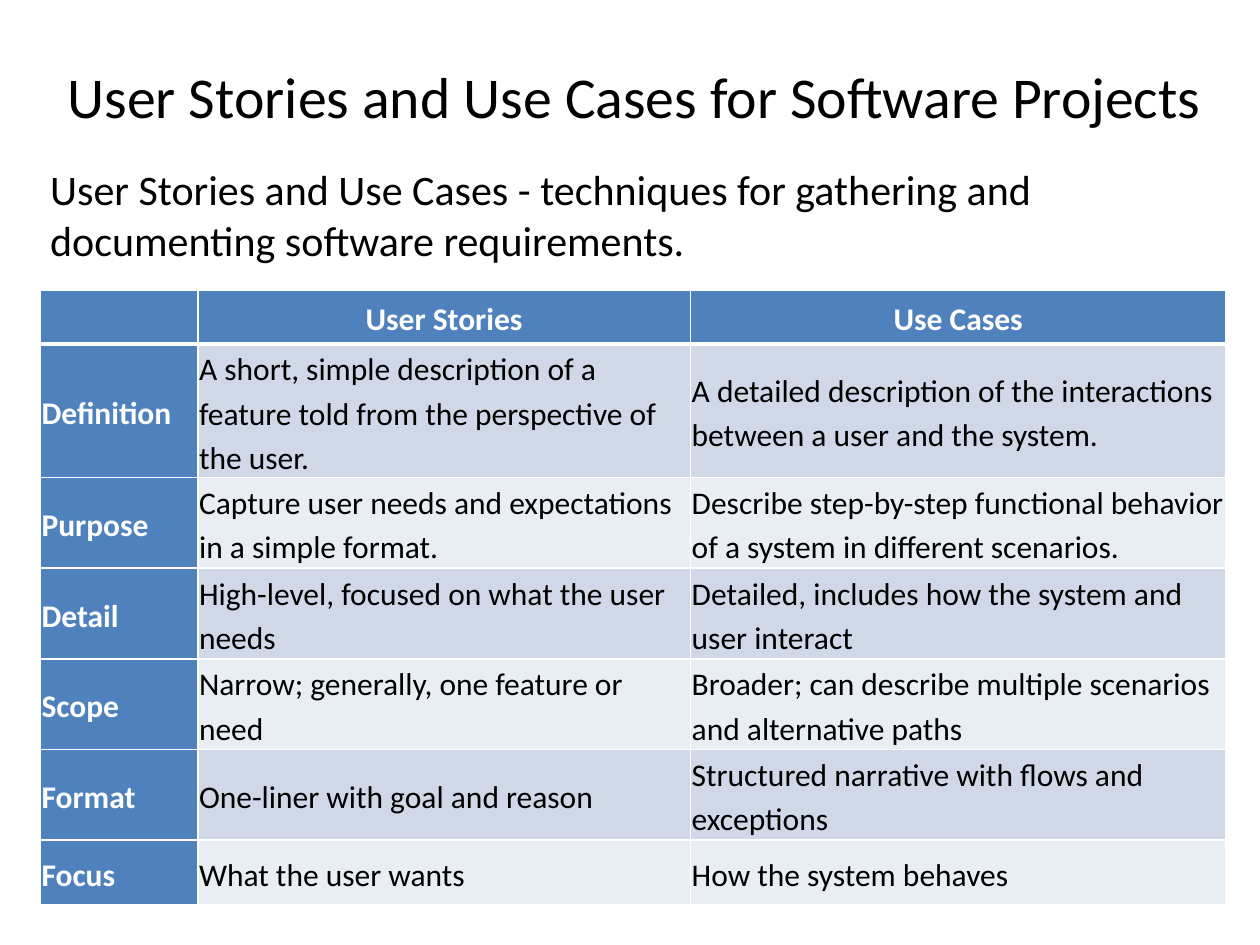
from pptx import Presentation
from pptx.dml.color import RGBColor
from pptx.enum.text import MSO_ANCHOR, PP_ALIGN
from pptx.oxml import parse_xml
from pptx.oxml.ns import nsdecls
from pptx.util import Inches, Pt

# Content
TITLE = "User Stories and Use Cases for Software Projects"
LEAD = ("User Stories and Use Cases - techniques for gathering and "
        "documenting software requirements.")
ROWS = [
    ("", "User Stories", "Use Cases"),
    ("Definition",
     "A short, simple description of a feature told from the perspective of the user.",
     "A detailed description of the interactions between a user and the system."),
    ("Purpose",
     "Capture user needs and expectations in a simple format.",
     "Describe step-by-step functional behavior of a system in different scenarios."),
    ("Detail",
     "High-level, focused on what the user needs",
     "Detailed, includes how the system and user interact"),
    ("Scope",
     "Narrow; generally, one feature or need",
     "Broader; can describe multiple scenarios and alternative paths"),
    ("Format",
     "One-liner with goal and reason",
     "Structured narrative with flows and exceptions"),
    ("Focus", "What the user wants", "How the system behaves"),
]

# Style and grid
HEX = {"head": "4F81BD", "odd": "D0D8E8", "even": "E9EDF4",
       "ink": "000000", "white": "FFFFFF"}
FONT = "Calibri"
WIDE = [1.25, 3.91, 4.25]
HIGH = [0.43, 1.06] + [0.72] * 4 + [0.51]
LEFT, TOP = 0.32, 2.3


def color(name):
    return RGBColor.from_string(HEX[name])


def style(para, size, ink="ink", bold=False, align=PP_ALIGN.LEFT):
    para.alignment = align
    font = para.font
    font.name, font.size, font.bold = FONT, Pt(size), bold
    font.color.rgb = color(ink)


def add_text(slide, box, text, size, anchor, align):
    frame = slide.shapes.add_textbox(*map(Inches, box)).text_frame
    frame.word_wrap = True
    frame.vertical_anchor = anchor
    frame.text = text
    style(frame.paragraphs[0], size, align=align)


def add_lines(cell, base):
    props = cell._tc.get_or_add_tcPr()
    for side, width in (("L", 1), ("R", 1), ("T", 1), ("B", base)):
        props.append(parse_xml(
            f'<a:ln{side} {nsdecls("a")} w="{Pt(width)}"><a:solidFill>'
            f'<a:srgbClr val="{HEX["white"]}"/></a:solidFill></a:ln{side}>'))


def fill_cell(cell, text, row, col):
    head = row == 0 or col == 0
    add_lines(cell, 3 if row == 0 else 1)
    cell.fill.solid()
    cell.fill.fore_color.rgb = color(
        "head" if head else "odd" if row % 2 else "even")
    cell.vertical_anchor = MSO_ANCHOR.MIDDLE
    cell.margin_left = cell.margin_right = Inches(0.01)
    cell.margin_top = cell.margin_bottom = Inches(0.01)
    cell.text = text
    para = cell.text_frame.paragraphs[0]
    para.line_spacing = 1.15
    para.space_after = Pt(8)
    style(para, 18, "white" if head else "ink", head,
          PP_ALIGN.LEFT if row else PP_ALIGN.CENTER)


def main():
    deck = Presentation()
    deck.slide_width, deck.slide_height = Inches(10), Inches(7.5)
    slide = deck.slides.add_slide(deck.slide_layouts[6])

    # Title and lead
    add_text(slide, (0.41, 0.13, 9.25, 1.25), TITLE, 33,
             MSO_ANCHOR.MIDDLE, PP_ALIGN.CENTER)
    add_text(slide, (0.3, 1.25, 9.09, 1), LEAD, 24,
             MSO_ANCHOR.TOP, PP_ALIGN.LEFT)

    # Table
    box = map(Inches, (LEFT, TOP, sum(WIDE), sum(HIGH)))
    table = slide.shapes.add_table(len(ROWS), len(WIDE), *box).table
    table.first_col = True
    for col, width in zip(table.columns, WIDE):
        col.width = Inches(width)
    for row, height in zip(table.rows, HIGH):
        row.height = Inches(height)
    for r, texts in enumerate(ROWS):
        for c, text in enumerate(texts):
            fill_cell(table.cell(r, c), text, r, c)

    deck.save("out.pptx")


if __name__ == "__main__":
    main()
